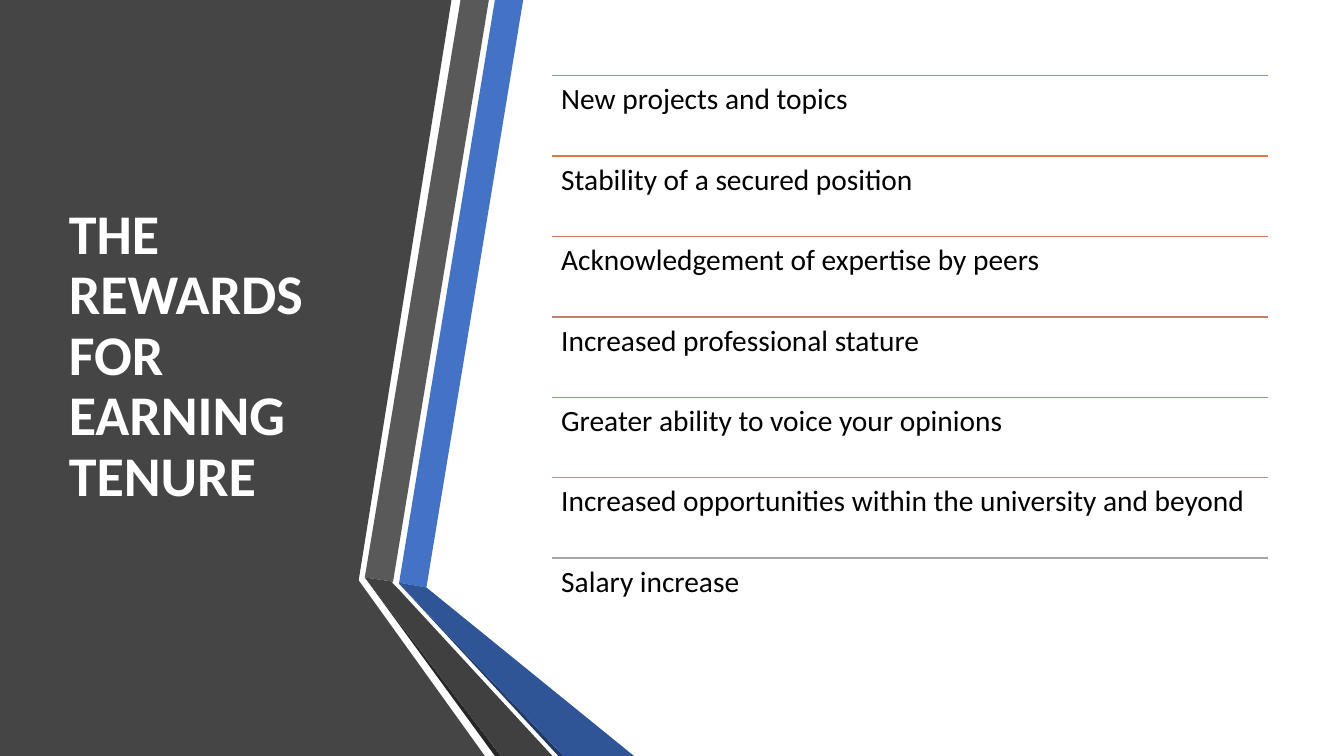
from lxml import etree
from pptx import Presentation
from pptx import util as u
from pptx.dml.color import RGBColor
from pptx.enum import shapes, text
from pptx.oxml import ns

WHITE = RGBColor(0xFF, 0xFF, 0xFF)
BLACK = RGBColor(0x00, 0x00, 0x00)
PANEL = RGBColor(0x45, 0x45, 0x45)
BLUE = RGBColor(0x44, 0x72, 0xC4)
BLUE_DARK = RGBColor(0x2F, 0x55, 0x97)
NAVY = RGBColor(0x20, 0x38, 0x64)
GRAY = RGBColor(0x59, 0x59, 0x59)
GRAY_DARK = RGBColor(0x40, 0x40, 0x40)
CHARCOAL = RGBColor(0x26, 0x26, 0x26)

# Ribbon outlines, in points, from back to front
PANEL_OUTLINE = [(0, 0), (322.5, 0), (256.3, 414), (256.3, 414.7), (346.3, 540), (0, 540)]
RIBBONS = [
    (BLUE, [(285.1, 416.2), (304.6, 419.6), (373.7, 0), (353.5, 0)]),
    (GRAY, [(349.2, 0), (329, 0), (260.6, 412.5), (280.8, 415.5)]),
    (CHARCOAL, [(260.6, 412.5), (353.5, 540), (357.8, 540)]),
    (NAVY, [(285.1, 416.9), (398.9, 540), (402.5, 540)]),
    (BLUE_DARK, [(285.1, 416.2), (285.1, 416.9), (402.5, 540), (452.9, 540), (304.6, 419.6)]),
    (GRAY_DARK, [(394.6, 540), (283.7, 419.8), (280.1, 416.2), (280.8, 415.5),
                 (260.6, 412.5), (357.8, 540)]),
]

# Each reward with the colour of the rule above it
REWARDS = [
    ("New projects and topics", RGBColor(0xED, 0x7D, 0x31)),
    ("Stability of a secured position", RGBColor(0xDE, 0x7A, 0x47)),
    ("Acknowledgement of expertise by peers", RGBColor(0xD1, 0x7B, 0x5C)),
    ("Increased professional stature", RGBColor(0xC4, 0x81, 0x70)),
    ("Greater ability to voice your opinions", RGBColor(0xB9, 0x8A, 0x82)),
    ("Increased opportunities within the university and beyond", RGBColor(0xAE, 0x96, 0x94)),
    ("Salary increase", RGBColor(0xA5, 0xA5, 0xA5)),
]
LIST_LEFT, LIST_TOP, LIST_WIDTH, ROW_HEIGHT = 394.6, 54, 511.2, 57.45


def apply(target, formats):
    for name, value in formats.items():
        setattr(target, name, value)


class SlideBuilder:
    """Holds the style and the current slide; lengths are in points."""

    font_name = "Calibri"

    def __init__(self, presentation):
        self.slide = presentation.slides.add_slide(presentation.slide_layouts[5])

    def set_text(self, shape, words, size, color, bold=False, space_after=0, **frame_formats):
        frame = shape.text_frame
        frame.text = words
        apply(frame, {"word_wrap": True, "auto_size": text.MSO_AUTO_SIZE.NONE, **frame_formats})
        paragraph = frame.paragraphs[0]
        apply(paragraph, {"alignment": text.PP_ALIGN.LEFT, "line_spacing": 0.9,
                          "space_after": u.Pt(space_after)})
        font = paragraph.runs[0].font
        apply(font, {"name": self.font_name, "size": u.Pt(size), "bold": bold})
        font.color.rgb = color

    def title(self, words, left, top, width, height):
        shape = self.slide.shapes.title
        apply(shape, {"left": u.Pt(left), "top": u.Pt(top),
                      "width": u.Pt(width), "height": u.Pt(height)})
        self.set_text(shape, words, 40, WHITE, bold=True, space_after=6,
                      vertical_anchor=text.MSO_ANCHOR.MIDDLE)
        # Bring the title in front of the panel
        shape.element.getparent().append(shape.element)

    def outline(self, points, color):
        start, *others = [(u.Pt(x), u.Pt(y)) for x, y in points]
        builder = self.slide.shapes.build_freeform(*start)
        builder.add_line_segments(others, close=True)
        shape = builder.convert_to_shape()
        shape.shadow.inherit = False
        shape.fill.solid()
        shape.fill.fore_color.rgb = color
        shape.line.fill.background()

    def rule(self, left, top, width, color):
        connector = self.slide.shapes.add_connector(
            shapes.MSO_CONNECTOR.STRAIGHT,
            u.Pt(left), u.Pt(top), u.Pt(left + width), u.Pt(top))
        connector.line.width = u.Pt(1)
        connector.line.color.rgb = color
        etree.SubElement(connector.element.spPr, ns.qn("a:effectLst"))

    def label(self, words, left, top, width, height):
        box = self.slide.shapes.add_textbox(u.Pt(left), u.Pt(top), u.Pt(width), u.Pt(height))
        inset = u.Pt(6.3)
        self.set_text(box, words, 21, BLACK, space_after=7.35,
                      vertical_anchor=text.MSO_ANCHOR.TOP, margin_left=inset,
                      margin_top=inset, margin_right=inset, margin_bottom=inset)


def main():
    presentation = Presentation()
    apply(presentation, {"slide_width": u.Pt(960), "slide_height": u.Pt(540)})
    builder = SlideBuilder(presentation)

    # Dark panel and folded ribbons
    builder.outline(PANEL_OUTLINE, PANEL)
    for color, points in RIBBONS:
        builder.outline(points, color)

    # Title
    builder.title("THE REWARDS FOR EARNING TENURE", 42, 54, 218.6, 402)

    # Ruled list of rewards
    for row, (reward, color) in enumerate(REWARDS):
        top = LIST_TOP + row * ROW_HEIGHT
        builder.rule(LIST_LEFT, top, LIST_WIDTH, color)
        builder.label(reward, LIST_LEFT, top, LIST_WIDTH, ROW_HEIGHT)

    presentation.save("out.pptx")


if __name__ == "__main__":
    main()
